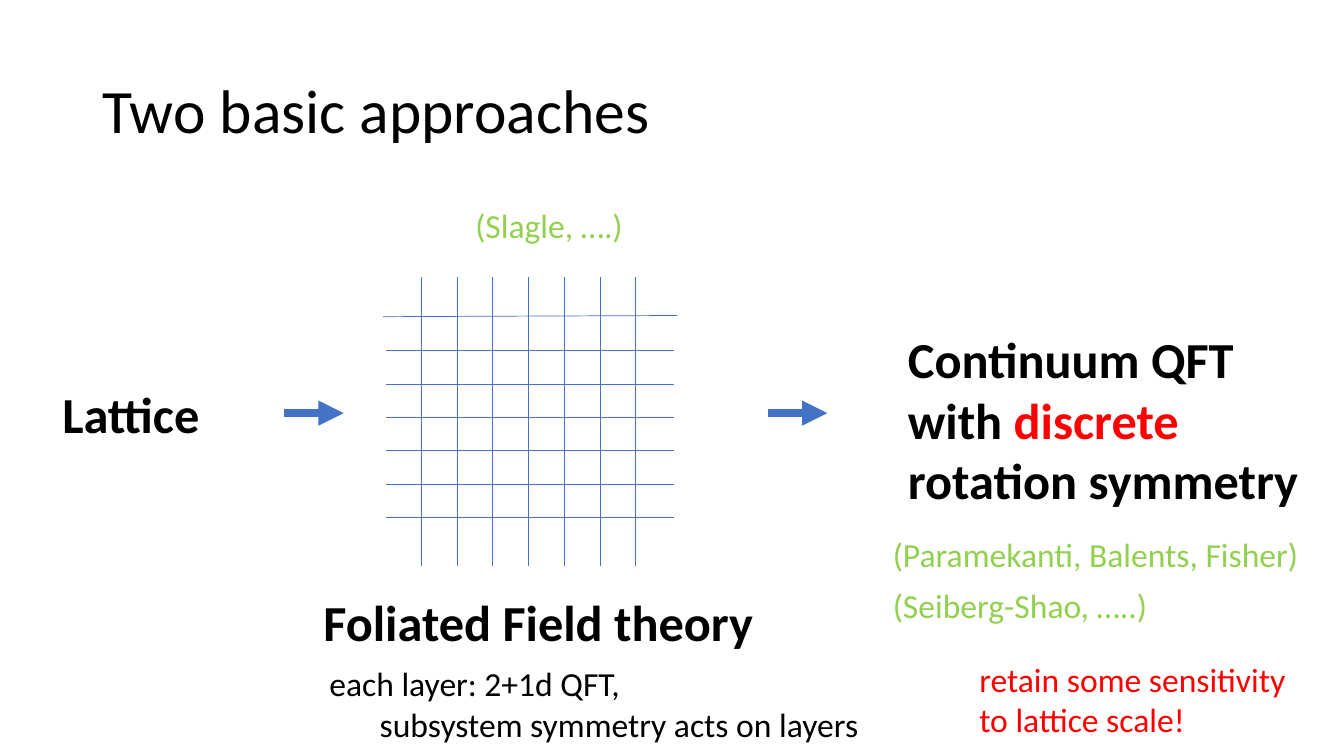
from lxml import etree
from pptx import Presentation
from pptx.dml.color import RGBColor
from pptx.enum.shapes import MSO_CONNECTOR
from pptx.enum.text import MSO_ANCHOR, MSO_AUTO_SIZE, PP_ALIGN
from pptx.oxml.ns import qn
from pptx.util import Cm, Pt

STRAIGHT = MSO_CONNECTOR.STRAIGHT
MIDDLE = MSO_ANCHOR.MIDDLE
FIT_SHAPE = MSO_AUTO_SIZE.SHAPE_TO_FIT_TEXT
LEFT = PP_ALIGN.LEFT

BLACK, RED, GREEN, BLUE = "000000", "FF0000", "92D050", "4472C4"


def rgb(value):
    return RGBColor.from_string(value)


class SlideBuilder:
    font = "Calibri"

    def __init__(self, slide):
        self.slide = slide

    def run(self, p, text, size, color, bold=False):
        r = p.add_run()
        r.text = text
        r.font.name = self.font
        r.font.size = Pt(size)
        r.font.bold = bold
        r.font.color.rgb = rgb(color)

    def title(self, text, x, y, w, h):
        sp = self.slide.shapes.title
        sp.left, sp.top, sp.width, sp.height = Cm(x), Cm(y), Cm(w), Cm(h)
        tf = sp.text_frame
        tf.vertical_anchor = MIDDLE
        p = tf.paragraphs[0]
        p.alignment = LEFT
        p.line_spacing = 0.9
        self.run(p, text, 44, BLACK)

    def text(self, lines, x, y, w, h, size=24, color=BLACK, bold=False):
        """Each line is a list of (text, colour) runs or a plain string."""
        tf = self.slide.shapes.add_textbox(Cm(x), Cm(y), Cm(w), Cm(h)).text_frame
        tf.word_wrap = False
        tf.auto_size = FIT_SHAPE
        for i, line in enumerate(lines):
            p = tf.add_paragraph() if i else tf.paragraphs[0]
            runs = [(line, color)] if isinstance(line, str) else line
            for text, run_color in runs:
                self.run(p, text, size, run_color, bold)

    def heading(self, lines, x, y, w, h):
        self.text(lines, x, y, w, h, size=36, bold=True)

    def line(self, x1, y1, x2, y2, width=0.5):
        cxn = self.slide.shapes.add_connector(
            STRAIGHT, Cm(x1), Cm(y1), Cm(x2), Cm(y2))
        cxn.line.color.rgb = rgb(BLUE)
        cxn.line.width = Pt(width)
        etree.SubElement(cxn._element.spPr, qn("a:effectLst"))
        return cxn

    def arrow(self, x, y, length):
        cxn = self.line(x, y, x + length, y, width=6)
        etree.SubElement(cxn.line._get_or_add_ln(), qn("a:tailEnd"), type="triangle")

    def lattice(self):
        for i in range(7):
            x = 10.62 + 0.9 * i
            self.line(x, 6.99, x, 14.27)
        self.line(17.07, 7.95, 9.65, 7.98)
        for i in range(6):
            y = 8.84 + 0.84 * i
            self.line(16.99, y, 9.73, y)


def main():
    prs = Presentation()
    prs.slide_width, prs.slide_height = Cm(33.87), Cm(19.05)
    s = SlideBuilder(prs.slides.add_slide(prs.slide_layouts[5]))

    s.title("Two basic approaches", 2.33, 1.01, 29.21, 3.68)
    s.text(["(Slagle, ….)"], 11.73, 5.03, 4.27, 1.28, color=GREEN)
    s.heading(["Lattice"], 1.32, 9.53, 4.06, 1.8)
    for x in (7.16, 19.35):
        s.arrow(x, 10.41, 1.5)
    s.lattice()

    s.heading(["Foliated Field theory"], 7.9, 14.78, 11.46, 1.8)
    s.text(["each layer: 2+1d QFT,", " \tsubsystem symmetry acts on layers"],
           8.05, 16.59, 15.24, 2.31)

    s.heading(["Continuum QFT",
               [("with ", BLACK), ("discrete", RED)],
               "rotation symmetry"], 22.63, 8.15, 10.46, 4.88)
    s.text(["(Paramekanti, Balents, Fisher)"], 22.25, 13.34, 10.82, 1.28, color=GREEN)
    s.text(["(Seiberg-Shao, …..)"], 22.25, 14.61, 6.99, 1.28, color=GREEN)
    s.text(["retain some sensitivity", "to lattice scale!"],
           24.43, 16.48, 8.31, 2.31, color=RED)

    prs.save("out.pptx")


if __name__ == "__main__":
    main()
